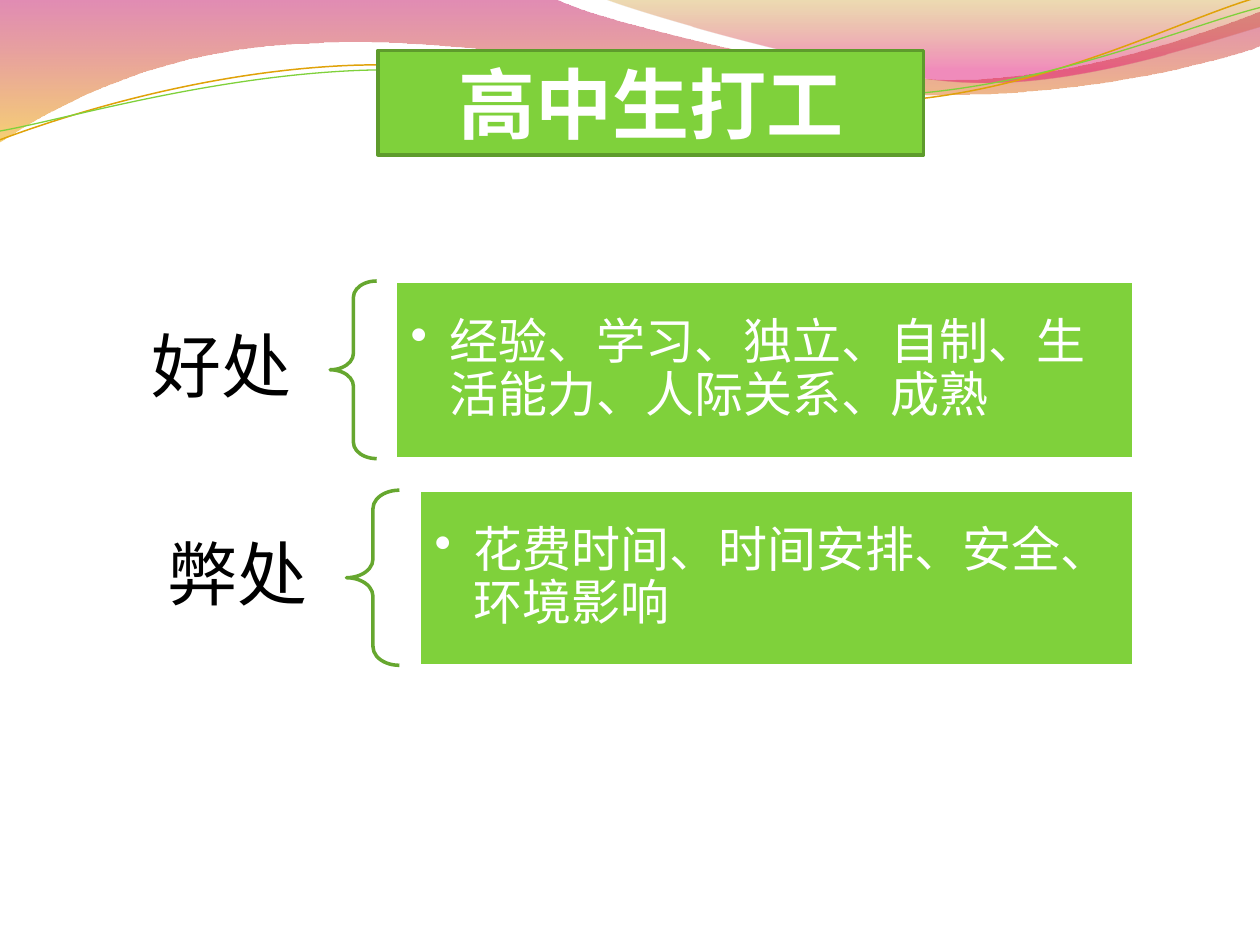
from dataclasses import dataclass
from typing import Optional

from lxml import etree
from pptx import Presentation
from pptx import util as u
from pptx.dml.color import RGBColor
from pptx.enum import shapes as sh
from pptx.enum import text as tx
from pptx.oxml import ns

FONT = "TeX Gyre Pagella"
GREEN, WHITE = "7FD13B", "FFFFFF"


@dataclass
class Wave:
    """A start point, then lines (x, y) and cubic curves (three points)."""
    start: tuple
    segs: list
    stops: tuple = ()  # position, colour, opacity in percent
    line: Optional[str] = None
    width: float = 0


@dataclass
class Branch:
    label: str
    body: str
    top: float
    height: float
    brace: float  # left edge of the brace
    span: float  # width of the brace
    left: float  # left edge of the body


FILLED = [
    Wave((0, 0), [(4.4, -0.01), (4.76, 0.17, 6.64, 0.63, 7.58, 0.63),
                  (8.53, 0.63, 9.58, 0.26, 10, 0.09), (10.01, 0.36),
                  (9.83, 0.44, 8.7, 0.76, 7.46, 0.75),
                  (6.22, 0.75, 3.82, 0.28, 2.57, 0.34),
                  (1.29, 0.36, 0.46, 0.83, -0.01, 1.13), (0, 0)],
         ((0, "BD0059", 45), (100, "F0AB00", 55))),
    Wave((4.79, -0.01), [(5.09, 0.11, 6.82, 0.62, 7.69, 0.65),
                         (8.56, 0.69, 9.61, 0.32, 10, 0.21), (10, 0),
                         (4.79, -0.01)],
         ((0, "C38B00", 30), (80, "E1006B", 45))),
]
STROKED = [
    Wave((0, 1.11), [(0.48, 0.93, 1.58, 0.57, 2.77, 0.52),
                     (3.95, 0.47, 5.93, 0.89, 7.13, 0.8),
                     (8.33, 0.71, 9.38, 0.15, 9.98, -0.02)],
         line="E0A209", width=0.85),
    Wave((0, 1.04), [(0.47, 0.96, 1.64, 0.61, 2.83, 0.56),
                     (4.03, 0.51, 5.97, 0.84, 7.17, 0.75),
                     (8.36, 0.67, 9.41, 0.21, 10, 0.06)],
         line=GREEN, width=0.75),
]
BRANCHES = [
    Branch("好处", "经验、学习、独立、自制、生活能力、人际关系、成熟",
           2.23, 1.41, 2.62, 0.37, 3.14),
    Branch("弊处", "花费时间、时间安排、安全、环境影响",
           3.89, 1.39, 2.75, 0.42, 3.33),
]
LABEL_LEFT, BODY_RIGHT = -0.83, 9


def rgb(code: str) -> RGBColor:
    return RGBColor.from_string(code)


def style(shape, fill: Optional[str], line: Optional[str], width: float = 2):
    shape.shadow.inherit = False
    if fill:
        shape.fill.solid()
        shape.fill.fore_color.rgb = rgb(fill)
    else:
        shape.fill.background()
    if line:
        shape.line.color.rgb = rgb(line)
        shape.line.width = u.Pt(width)
    else:
        shape.line.fill.background()


def bend(shape, segs: list):
    """Turn each run of three line steps into one cubic curve."""
    steps = iter(list(shape._element.iter(ns.qn("a:lnTo"))))
    for seg in segs:
        first = next(steps)
        if len(seg) == 2:
            continue
        curve = etree.Element(ns.qn("a:cubicBezTo"))
        first.addprevious(curve)
        for step in (first, next(steps), next(steps)):
            curve.append(step[0])
            step.getparent().remove(step)


def fade(shape, stops: tuple):
    """Fill from top to bottom with translucent colours."""
    old = shape._element.spPr.find(ns.qn("a:noFill"))
    grad = etree.Element(ns.qn("a:gradFill"), rotWithShape="1")
    rows = etree.SubElement(grad, ns.qn("a:gsLst"))
    for pos, code, alpha in stops:
        stop = etree.SubElement(rows, ns.qn("a:gs"), pos=str(pos * 1000))
        tint = etree.SubElement(stop, ns.qn("a:srgbClr"), val=code)
        etree.SubElement(tint, ns.qn("a:alpha"), val=str(alpha * 1000))
    etree.SubElement(grad, ns.qn("a:lin"), ang="5400000", scaled="1")
    old.getparent().replace(old, grad)


def draw_wave(board, wave: Wave):
    pts = [(u.Inches(seg[i]), u.Inches(seg[i + 1]))
           for seg in [wave.start, *wave.segs]
           for i in range(0, len(seg), 2)]
    pen = board.build_freeform(*pts[0])
    pen.add_line_segments(pts[1:], close=bool(wave.stops))
    shape = pen.convert_to_shape()
    bend(shape, wave.segs)
    style(shape, None, wave.line, wave.width)
    if wave.stops:
        fade(shape, wave.stops)


def write(shape, words: str, size: float, code: str, align,
          pad: tuple = (0.1, 0.05), bold: bool = False):
    frame = shape.text_frame
    frame.word_wrap = True
    frame.vertical_anchor = tx.MSO_ANCHOR.MIDDLE
    frame.margin_left = frame.margin_right = u.Inches(pad[0])
    frame.margin_top = frame.margin_bottom = u.Inches(pad[1])
    para = frame.paragraphs[0]
    para.alignment = align
    run = para.add_run()
    run.text = words
    font = run.font
    font.name, font.size, font.bold = FONT, u.Pt(size), bold
    font.color.rgb = rgb(code)
    return para


def space(para, after: int):
    """Tighten the lines and set the gap below in percent."""
    para.line_spacing = 0.9
    gap = etree.SubElement(para._p.get_or_add_pPr(), ns.qn("a:spcAft"))
    etree.SubElement(gap, ns.qn("a:spcPct"), val=str(after * 1000))


def bullet(para):
    para.level = 1
    props = para._p.get_or_add_pPr()
    props.set("marL", str(u.Inches(0.31)))
    props.set("indent", str(-u.Inches(0.31)))
    etree.SubElement(props, ns.qn("a:buChar"), char="•")


def box(left: float, top: float, width: float, height: float) -> list:
    return [u.Inches(n) for n in (left, top, width, height)]


def draw_branch(board, item: Branch):
    label = board.add_textbox(*box(LABEL_LEFT, item.top,
                                   item.brace - LABEL_LEFT, item.height))
    para = write(label, item.label, 40, "000000", tx.PP_ALIGN.RIGHT,
                 (0.31, 0.11))
    space(para, 35)

    brace = board.add_shape(sh.MSO_SHAPE.LEFT_BRACE, *box(
        item.brace, item.top, item.span, item.height))
    brace.adjustments[0] = 0.35
    style(brace, None, "66A72F")

    area = box(item.left, item.top, BODY_RIGHT - item.left, item.height)
    panel = board.add_shape(sh.MSO_SHAPE.RECTANGLE, *area)
    style(panel, GREEN, WHITE)
    body = board.add_textbox(*area)
    para = write(body, item.body, 28, WHITE, tx.PP_ALIGN.LEFT, (0.12, 0.12))
    space(para, 15)
    bullet(para)


def main():
    deck = Presentation()
    deck.slide_width, deck.slide_height = u.Inches(10), u.Inches(7.5)
    slide = deck.slides.add_slide(deck.slide_layouts[6])
    board = slide.shapes
    for wave in FILLED:
        draw_wave(board, wave)
    lines = board.add_group_shape().shapes
    for wave in STROKED:
        draw_wave(lines, wave)
    chart = board.add_group_shape().shapes
    for item in BRANCHES:
        draw_branch(chart, item)
    title = board.add_shape(sh.MSO_SHAPE.RECTANGLE, *box(3, 0.4, 4.33, 0.83))
    style(title, GREEN, "5E9B2C")
    write(title, "高中生打工", 44, WHITE, tx.PP_ALIGN.CENTER, bold=True)
    deck.save("out.pptx")


if __name__ == "__main__":
    main()
